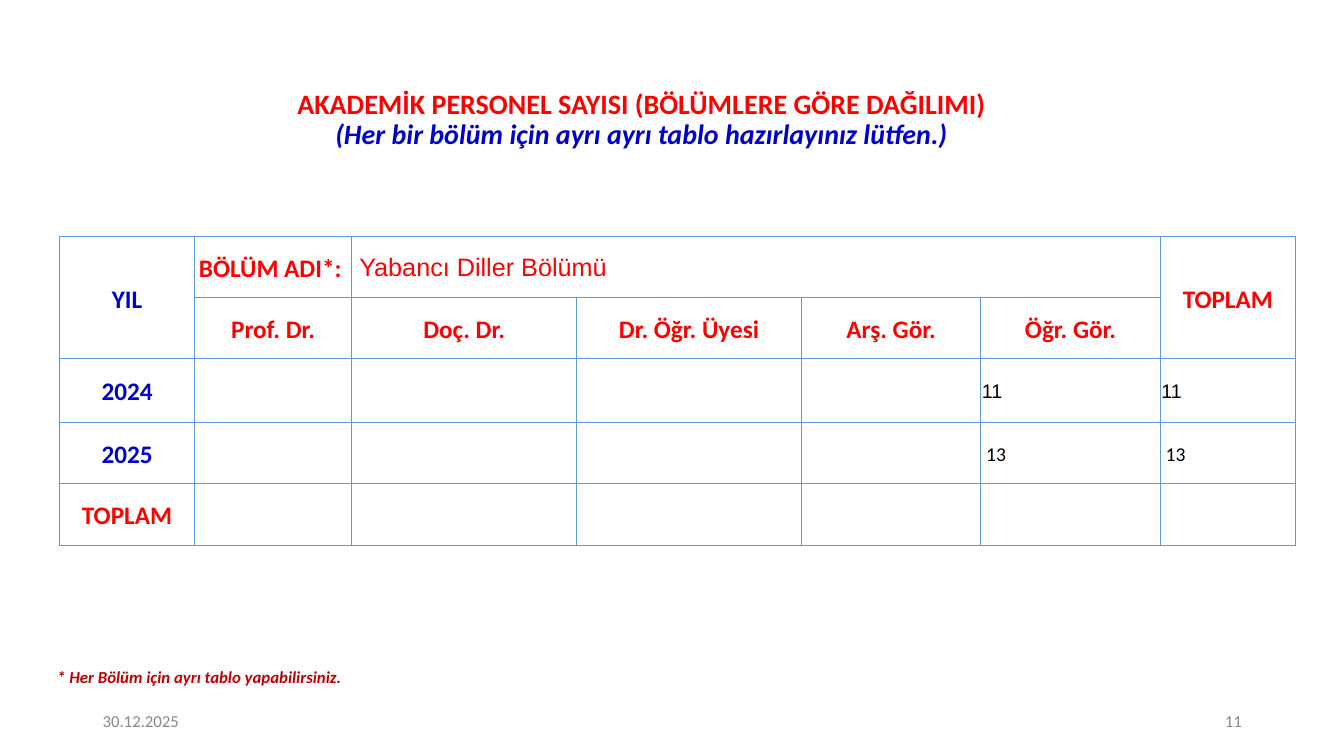
from dataclasses import dataclass

from lxml.etree import SubElement
from pptx import Presentation
from pptx.dml.color import RGBColor
from pptx.enum.text import MSO_ANCHOR, PP_ALIGN
from pptx.oxml import parse_xml
from pptx.oxml.ns import nsdecls, qn
from pptx.util import Pt


@dataclass(frozen=True)
class Theme:
    red: str = "FF0000"
    blue: str = "0000CC"
    dark_red: str = "C00000"
    grey: str = "888888"
    black: str = "000000"
    border: str = "5B9BD5"
    font: str = "Calibri"
    alt_font: str = "Arial"
    title: int = 20
    header: int = 18
    value: int = 14
    small: int = 12


THEME = Theme()

COLUMN_WIDTHS = (96.5, 112.3, 160.6, 160.6, 128.2, 128.2, 96.5)
ROW_HEIGHTS = (43.2, 43.9, 45.4, 43.9, 43.9)
RANKS = ("Prof. Dr.", "Doç. Dr.", "Dr. Öğr. Üyesi", "Arş. Gör.", "Öğr. Gör.")


def add_run(p, text, size, color, bold=False, italic=False, font=THEME.font):
    r = p.add_run()
    r.text = text
    r.font.name = font
    r.font.size = Pt(size)
    r.font.bold = bold
    r.font.italic = italic
    r.font.color.rgb = RGBColor.from_string(color)


def add_text_box(slide, left, top, width, height, align=PP_ALIGN.LEFT,
                 anchor=MSO_ANCHOR.MIDDLE):
    """Add an empty wrapping text box and return its first paragraph."""
    sp = slide.shapes.add_textbox(Pt(left), Pt(top), Pt(width), Pt(height))
    tf = sp.text_frame
    tf.word_wrap = True
    tf.vertical_anchor = anchor
    p = tf.paragraphs[0]
    p.alignment = align
    return p


def add_title(slide):
    p = add_text_box(slide, 51.1, 50.4, 814.3, 71.3, PP_ALIGN.CENTER)
    p.line_spacing = 0.9
    add_run(p, "AKADEMİK PERSONEL SAYISI (BÖLÜMLERE GÖRE DAĞILIMI)",
            THEME.title, THEME.red, bold=True)
    p.add_line_break()
    add_run(p, "(Her bir bölüm için ayrı ayrı tablo hazırlayınız lütfen.)",
            THEME.title, THEME.blue, bold=True, italic=True)


def style_cell(cell):
    """Set tight margins, no fill and a thin border on all four sides."""
    cell.margin_left = cell.margin_right = cell.margin_top = Pt(0.72)
    cell.margin_bottom = 0
    cell.vertical_anchor = MSO_ANCHOR.MIDDLE
    cell.fill.background()
    tc_pr = cell._tc.get_or_add_tcPr()
    for i, side in enumerate(("lnL", "lnR", "lnT", "lnB")):
        ln = parse_xml(f'<a:{side} {nsdecls("a")} w="{Pt(1)}"/>')
        fill = SubElement(ln, qn("a:solidFill"))
        SubElement(fill, qn("a:srgbClr"), val=THEME.border)
        tc_pr.insert(i, ln)


def write_header(cell, text, color=THEME.red):
    p = cell.text_frame.paragraphs[0]
    p.alignment = PP_ALIGN.CENTER
    p.line_spacing = 1.07
    add_run(p, text, THEME.header, color, bold=True)


def write_value(cell, text, font):
    p = cell.text_frame.paragraphs[0]
    p.line_spacing = 1.07
    add_run(p, text, THEME.value, THEME.black, font=font)


def add_grid(slide, left, top):
    """Add the empty bordered table with its merged header cells."""
    frame = slide.shapes.add_table(
        len(ROW_HEIGHTS), len(COLUMN_WIDTHS), Pt(left), Pt(top),
        Pt(sum(COLUMN_WIDTHS)), Pt(sum(ROW_HEIGHTS)))
    table = frame.table
    table.first_row = table.horz_banding = False
    for column, width in zip(table.columns, COLUMN_WIDTHS):
        column.width = Pt(width)
    for row, height in zip(table.rows, ROW_HEIGHTS):
        row.height = Pt(height)
    for cell in table.iter_cells():
        style_cell(cell)
    for first, last in (((0, 0), (1, 0)), ((0, 2), (0, 5)), ((0, 6), (1, 6))):
        table.cell(*first).merge(table.cell(*last))
    return table


def add_staff_table(slide):
    table = add_grid(slide, 42.5, 169.2)
    write_header(table.cell(0, 0), "YIL", THEME.blue)
    write_header(table.cell(0, 1), "BÖLÜM ADI*: ")
    add_run(table.cell(0, 2).text_frame.paragraphs[0], " Yabancı Diller Bölümü",
            THEME.header, THEME.red, font=THEME.alt_font)
    write_header(table.cell(0, 6), "TOPLAM")
    for col, rank in enumerate(RANKS, start=1):
        write_header(table.cell(1, col), rank)

    years = (("2024", "11", THEME.alt_font), ("2025", " 13", THEME.font))
    for row, (year, count, font) in enumerate(years, start=2):
        write_header(table.cell(row, 0), year, THEME.blue)
        for col in (5, 6):
            write_value(table.cell(row, col), count, font)
    write_header(table.cell(4, 0), "TOPLAM")


def add_footer(slide):
    for text, left, align in (("30.12.2025", 66.2, PP_ALIGN.LEFT),
                              ("11", 678.2, PP_ALIGN.RIGHT)):
        p = add_text_box(slide, left, 500.4, 216, 28.8, align)
        add_run(p, text, THEME.small, THEME.grey)


def add_footnote(slide):
    p = add_text_box(slide, 33.8, 473, 610.6, 21.6, anchor=MSO_ANCHOR.TOP)
    add_run(p, "* Her Bölüm için ayrı tablo yapabilirsiniz.",
            THEME.small, THEME.dark_red, bold=True, italic=True)


def main():
    prs = Presentation()
    prs.slide_width, prs.slide_height = Pt(960), Pt(540)
    slide = prs.slides.add_slide(prs.slide_layouts[6])
    add_title(slide)
    add_footer(slide)
    add_staff_table(slide)
    add_footnote(slide)
    prs.save("out.pptx")


if __name__ == "__main__":
    main()
